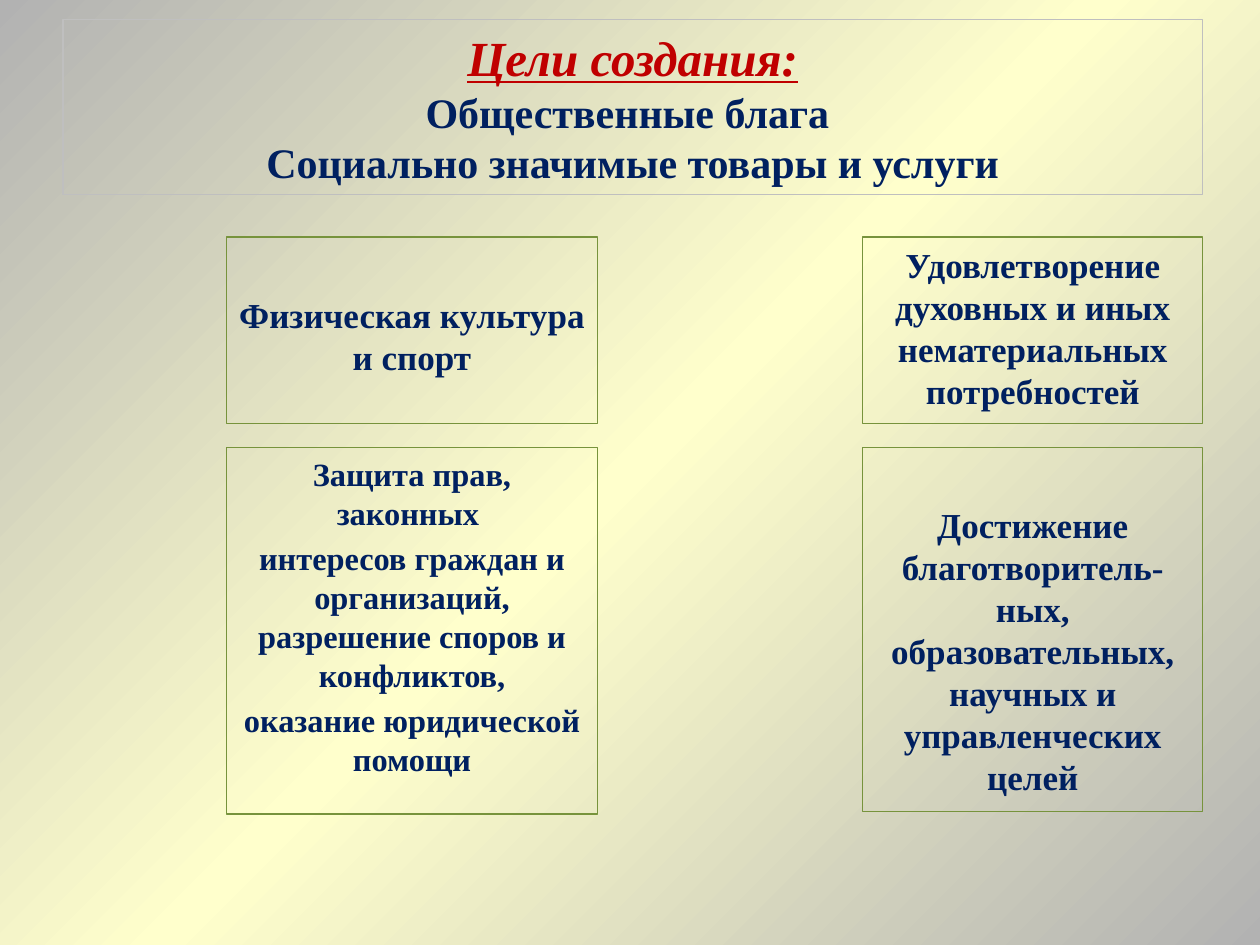
from dataclasses import dataclass

from lxml import etree
from pptx import Presentation
from pptx import util as u
from pptx.dml.color import RGBColor
from pptx.enum import text
from pptx.oxml import ns


@dataclass(frozen=True)
class Theme:
    font: str = "Times New Roman"
    navy: str = "002060"
    red: str = "C00000"
    green: str = "77933C"
    grey: str = "BFBFBF"
    backdrop: tuple = ((0, "B2B2B2"), (50, "FFFFCC"), (100, "B2B2B2"))
    heading_size: float = 28
    subheading_size: float = 24
    goal_size: float = 20
    small_goal_size: float = 18.5
    line_width: float = 0.75
    inset: float = 0.13


THEME = Theme()


def paint_background(slide):
    """Diagonal three-stop gradient."""
    fill = slide.background.fill
    fill.gradient()
    fill.gradient_angle = 315  # counter-clockwise, so 45 degrees downwards
    stops = slide.background._cSld.find(".//" + ns.qn("a:gsLst"))
    for stop in list(stops):
        stops.remove(stop)
    for percent, color in THEME.backdrop:
        stop = etree.SubElement(stops, ns.qn("a:gs"), pos=str(percent * 1000))
        etree.SubElement(stop, ns.qn("a:srgbClr"), val=color)


def add_frame(slide, box, border, anchor, top_inset=THEME.inset):
    """Outlined, wrapping text frame at box = (left, top, width, height) in cm."""
    frame = slide.shapes.add_textbox(*map(u.Cm, box))
    frame.line.color.rgb = RGBColor.from_string(border)
    frame.line.width = u.Pt(THEME.line_width)
    body = frame.text_frame
    body.word_wrap = True
    body.vertical_anchor = anchor
    body.margin_top = u.Cm(top_inset)
    return body


def add_run(paragraph, words, size, color, emphasis=False):
    run = paragraph.add_run()
    run.text = words
    font = run.font
    font.name, font.size, font.bold = THEME.font, u.Pt(size), True
    font.italic = font.underline = emphasis
    font.color.rgb = RGBColor.from_string(color)


def add_title(slide, box, heading, subheadings):
    body = add_frame(slide, box, THEME.grey, text.MSO_ANCHOR.MIDDLE)
    paragraph = body.paragraphs[0]
    paragraph.alignment = text.PP_ALIGN.CENTER
    add_run(paragraph, heading, THEME.heading_size, THEME.red, emphasis=True)
    for subheading in subheadings:
        paragraph.add_line_break()
        add_run(paragraph, subheading, THEME.subheading_size, THEME.navy)


def add_goal(slide, box, lines, size=THEME.goal_size, drop=0):
    """One goal; drop lowers its text from the top edge, in cm."""
    body = add_frame(slide, box, THEME.green, text.MSO_ANCHOR.TOP,
                     THEME.inset + drop)
    for index, line in enumerate(lines):
        paragraph = body.add_paragraph() if index else body.paragraphs[0]
        paragraph.alignment = text.PP_ALIGN.CENTER
        if index:
            paragraph.space_before = u.Pt(0.2 * size)
        add_run(paragraph, line, size, THEME.navy)


def add_goals(slide, box):
    """Two columns of two goals; the columns touch the sides of the box."""
    left, top, width, height = box
    left_width, right_width = 7.47, 6.86
    upper_height, gap, drop = 3.76, 0.48, 1
    right = left + width - right_width
    lower_top = top + upper_height + gap
    lower_height = height - upper_height - gap

    add_goal(slide, (left, top, left_width, upper_height),
             ["Физическая культура и спорт"], drop=drop)
    add_goal(slide, (left, lower_top, left_width, lower_height),
             ["Защита прав, законных ",
              "интересов граждан и организаций, разрешение споров и конфликтов,",
              "оказание юридической помощи"], size=THEME.small_goal_size)
    add_goal(slide, (right, top, right_width, upper_height),
             ["Удовлетворение духовных и иных нематериальных потребностей"])
    add_goal(slide, (right, lower_top, right_width, lower_height - 0.05),
             ["Достижение благотворитель-ных, образовательных, "
              "научных и управленческих целей"], drop=drop)


def main():
    deck = Presentation()
    deck.slide_width, deck.slide_height = u.Cm(25.4), u.Cm(19.05)
    slide = deck.slides.add_slide(deck.slide_layouts[6])
    paint_background(slide)
    # Heading
    add_title(slide, (1.27, 0.4, 22.97, 3.53), "Цели создания:",
              ["Общественные блага ", "Социально значимые товары и услуги"])
    # Grid of goals
    add_goals(slide, (4.57, 4.78, 19.68, 11.63))
    deck.save("out.pptx")


if __name__ == "__main__":
    main()
